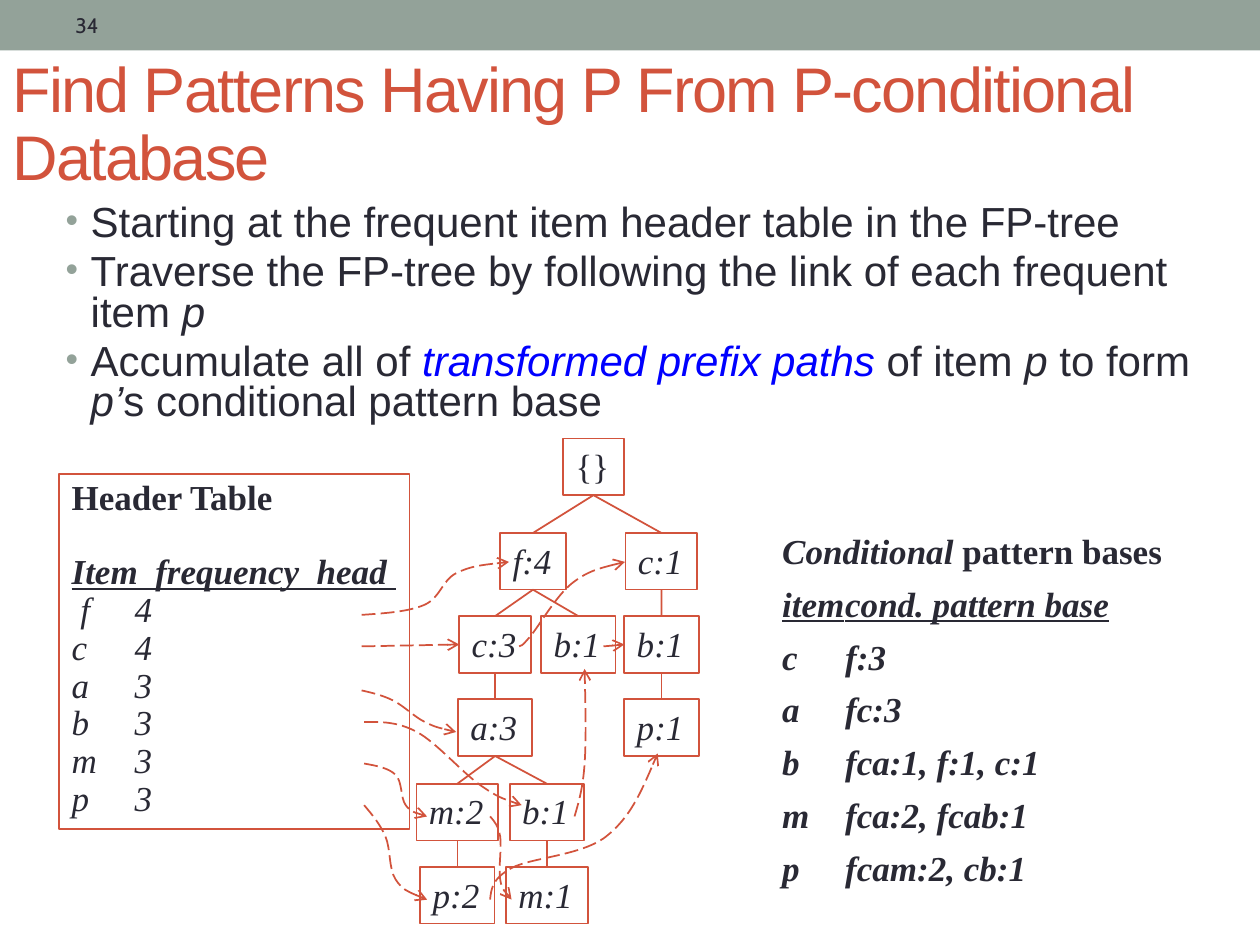
from lxml import etree
from pptx import Presentation
from pptx.dml.color import RGBColor
from pptx.enum import dml, shapes, text
from pptx.oxml import ns
from pptx.util import Inches, Pt

HUE = {"bar": "93A299", "red": "D2533C", "ink": "292934", "blue": "0000FF"}
SANS, SERIF = "Arial", "Times New Roman"

# Runs are (text, style): b bold, i italic, u underline, c blue
TITLE = "Find Patterns Having P From P-conditional Database"
POINTS = [
    [("Starting at the frequent item header table in the FP-tree", "")],
    [("Traverse the FP-tree by following the link of each frequent item ", ""), ("p", "i")],
    [("Accumulate all of ", ""), ("transformed prefix paths", "ic"), (" of item ", ""),
     ("p ", "i"), ("to form ", ""), ("p’", "i"), ("s conditional pattern base", "")],
]
BASES = [("c", "f:3"), ("a", "fc:3"), ("b", "fca:1, f:1, c:1"),
         ("m", "fca:2, fcab:1"), ("p", "fcam:2, cb:1")]
ITEMS = [(" f", 4), ("c", 4), ("a", 3), ("b", 3), ("m", 3), ("p", 3)]

# Tree nodes: key, label, centre x, level, width
NODES = [
    ("root", "{}", 4.71, 0, 0.48), ("f", "f:4", 4.23, 1, 0.52), ("c1", "c:1", 5.25, 1, 0.57),
    ("c3", "c:3", 3.93, 2, 0.57), ("b", "b:1", 4.59, 2, 0.59), ("cb", "b:1", 5.25, 2, 0.59),
    ("a", "a:3", 3.93, 3, 0.59), ("p1", "p:1", 5.25, 3, 0.59), ("m2", "m:2", 3.63, 4, 0.65),
    ("ab", "b:1", 4.34, 4, 0.59), ("p2", "p:2", 3.63, 5, 0.59), ("m1", "m:1", 4.34, 5, 0.65),
]
TOPS = [3.48, 4.23, 4.89, 5.55, 6.22, 6.88]
EDGES = [("root", "f"), ("root", "c1"), ("f", "c3"), ("f", "b"), ("c1", "cb"), ("cb", "p1"),
         ("c3", "a"), ("a", "m2"), ("a", "ab"), ("m2", "p2"), ("ab", "m1")]
LINKS = [(2.87, 5.13, "c3"), (4.79, 5.13, "cb")]
CURVES = [
    [(2.87, 4.88), (3.37, 4.8), (3.62, 4.55), (4.04, 4.46)],
    [(4.12, 5.13), (4.21, 5.05), (4.54, 4.63), (4.96, 4.46)],
    [(2.87, 5.48), (3.12, 5.56), (3.37, 5.73), (3.62, 5.81)],
    [(2.89, 5.73), (3.31, 5.81), (3.81, 6.23), (4.14, 6.39)],
    [(4.56, 6.48), (4.64, 6.06), (4.64, 5.31)],
    [(2.89, 6.06), (3.14, 6.15), (3.22, 6.39), (3.39, 6.48)],
    [(3.89, 6.48), (3.97, 6.64), (3.97, 6.98), (4.06, 7.14)],
    [(2.89, 6.39), (3.06, 6.64), (3.14, 6.98), (3.39, 7.14)],
    [(3.89, 7.14), (4.06, 6.89), (4.81, 6.64), (5.22, 5.98)],
]


def rgb(key):
    return RGBColor.from_string(HUE[key])


def sub(node, tag, **attrs):
    return etree.SubElement(node, ns.qn(tag), attrs)


def place(shape, *box):
    shape.left, shape.top, shape.width, shape.height = map(Inches, box)
    return shape


def write(frame, rows, size, face, lead=1.0, gap=0):
    for n, row in enumerate(rows):
        para = frame.paragraphs[0] if n == 0 else frame.add_paragraph()
        para.alignment = text.PP_ALIGN.LEFT
        para.line_spacing, para.space_before = lead, Pt(gap)
        for words, style in row:
            run = para.add_run()
            run.text = words
            font = run.font
            font.name, font.size = face, Pt(size)
            font.bold, font.italic, font.underline = (k in style for k in "biu")
            font.color.rgb = rgb("blue" if "c" in style else "ink")


def label(slide, *box):
    frame = slide.shapes.add_textbox(*map(Inches, box)).text_frame
    frame.word_wrap = True
    return frame


def frame_box(slide, *box):
    rect = slide.shapes.add_shape(shapes.MSO_SHAPE.RECTANGLE, *map(Inches, box))
    rect.shadow.inherit = False
    rect.fill.background()
    stroke(rect)
    rect.text_frame.word_wrap = False
    rect.text_frame.vertical_anchor = text.MSO_ANCHOR.TOP
    return rect


def stroke(shape, arrow=False):
    shape.line.color.rgb, shape.line.width = rgb("red"), Pt(1)
    if arrow:
        shape.line.dash_style = dml.MSO_LINE.LONG_DASH
        sub(shape.line._get_or_add_ln(), "a:tailEnd", type="arrow")


def join(slide, start, end, side, arrow=False):
    x, y = start if arrow else (0, 0)
    line = slide.shapes.add_connector(shapes.MSO_CONNECTOR.STRAIGHT, Inches(x), Inches(y), 0, 0)
    if not arrow:
        line.begin_connect(start, 2)
    line.end_connect(end, side)
    stroke(line, arrow)
    sub(line._element.spPr, "a:effectLst")


def curve(slide, knots):
    def pull(n, sign):
        return tuple(k + sign * (b - a) / 6
                     for a, k, b in zip(knots[n - 1], knots[n], knots[n + 1]))

    def mid(p, q):
        return tuple((a + b) / 2 for a, b in zip(p, q))

    last, track = len(knots) - 1, []
    for n in range(last):
        one = pull(n, 1) if n else None
        two = pull(n + 1, -1) if n + 1 < last else mid(knots[-1], one)
        track += [one or mid(knots[0], two), two, knots[n + 1]]
    pen = slide.shapes.build_freeform(*knots[0], scale=Inches(1))
    pen = slide.shapes.build_freeform(*(Inches(v) for v in knots[0]))
    pen.add_line_segments([tuple(map(Inches, p)) for p in track], close=False)
    shape = pen.convert_to_shape()
    shape.shadow.inherit = False
    shape.fill.background()
    stroke(shape, True)
    steps = list(shape._element.iter(ns.qn("a:lnTo")))
    for n in range(0, len(steps), 3):
        bend = etree.Element(ns.qn("a:cubicBezTo"))
        steps[n].addprevious(bend)
        for step in steps[n:n + 3]:
            bend.append(step[0])
            step.getparent().remove(step)


def head(slide):
    bar = frame_box(slide, 0, 0, 10, 0.4)
    bar.fill.solid()
    bar.fill.fore_color.rgb = rgb("bar")
    bar.line.fill.background()
    page = label(slide, 0.5, 0.02, 3.17, 0.36)
    page.vertical_anchor = text.MSO_ANCHOR.MIDDLE
    write(page, [[("34", "")]], 12, "Cabin")

    title = place(slide.shapes.title, 0, 0.25, 9.75, 1.5).text_frame
    title.auto_size, title.vertical_anchor = text.MSO_AUTO_SIZE.NONE, text.MSO_ANCHOR.MIDDLE
    write(title, [[(TITLE, "")]], 36, SANS, 0.9)
    font = title.paragraphs[0].runs[0].font
    font.color.rgb = rgb("red")
    font._element.set("spc", "-100")

    body = place(slide.placeholders[1], 0.42, 1.58, 9.17, 1.67).text_frame
    body.auto_size, body.vertical_anchor = text.MSO_AUTO_SIZE.NONE, text.MSO_ANCHOR.TOP
    write(body, POINTS, 24, SANS, 0.8, 5)
    for para in body.paragraphs:
        prop = para._p.get_or_add_pPr()
        prop.set("marL", str(Inches(0.2)))
        prop.set("indent", str(Inches(-0.2)))
        sub(sub(prop, "a:buClr"), "a:srgbClr", val=HUE["bar"])
        sub(prop, "a:buSzPct", val="85000")
        sub(prop, "a:buFont", typeface=SANS)
        sub(prop, "a:buChar", char="•")


def tables(slide):
    bases = label(slide, 6.11, 4.15, 3.64, 3.04)
    rows = [[("Conditional ", "bi"), ("pattern bases", "b")],
            [("item\tcond. pattern base", "biu")]]
    rows += [[(f"{item}\t{base}", "bi")] for item, base in BASES]
    write(bases, rows, 20, SERIF, 0.8, 11)
    bases.paragraphs[0].line_spacing = 1.0

    box = frame_box(slide, 0.47, 3.76, 2.78, 2.82).text_frame
    rows = [[("Header Table", "b")], [("Item  frequency  head ", "biu")]]
    rows += [[(f"{item}\t{count}", "i")] for item, count in ITEMS]
    write(box, rows, 20, SERIF, 0.9)
    box.paragraphs[1].space_before = Pt(21)


def tree(slide):
    made = {}
    for key, name, mid, level, wide in NODES:
        made[key] = frame_box(slide, mid - wide / 2, TOPS[level], wide, 0.45)
        write(made[key].text_frame, [[(name, "" if key == "root" else "i")]], 20, SERIF)
    for top, low in EDGES:
        join(slide, made[top], made[low], 0)
    for x, y, key in LINKS:
        join(slide, (x, y), made[key], 1, True)
    for knots in CURVES:
        curve(slide, knots)


def main():
    """Build the slide on mining patterns from an FP-tree."""
    deck = Presentation()
    deck.slide_width, deck.slide_height = Inches(10), Inches(7.5)
    slide = deck.slides.add_slide(deck.slide_layouts[1])
    head(slide)
    tables(slide)
    tree(slide)
    deck.save("out.pptx")


if __name__ == "__main__":
    main()
